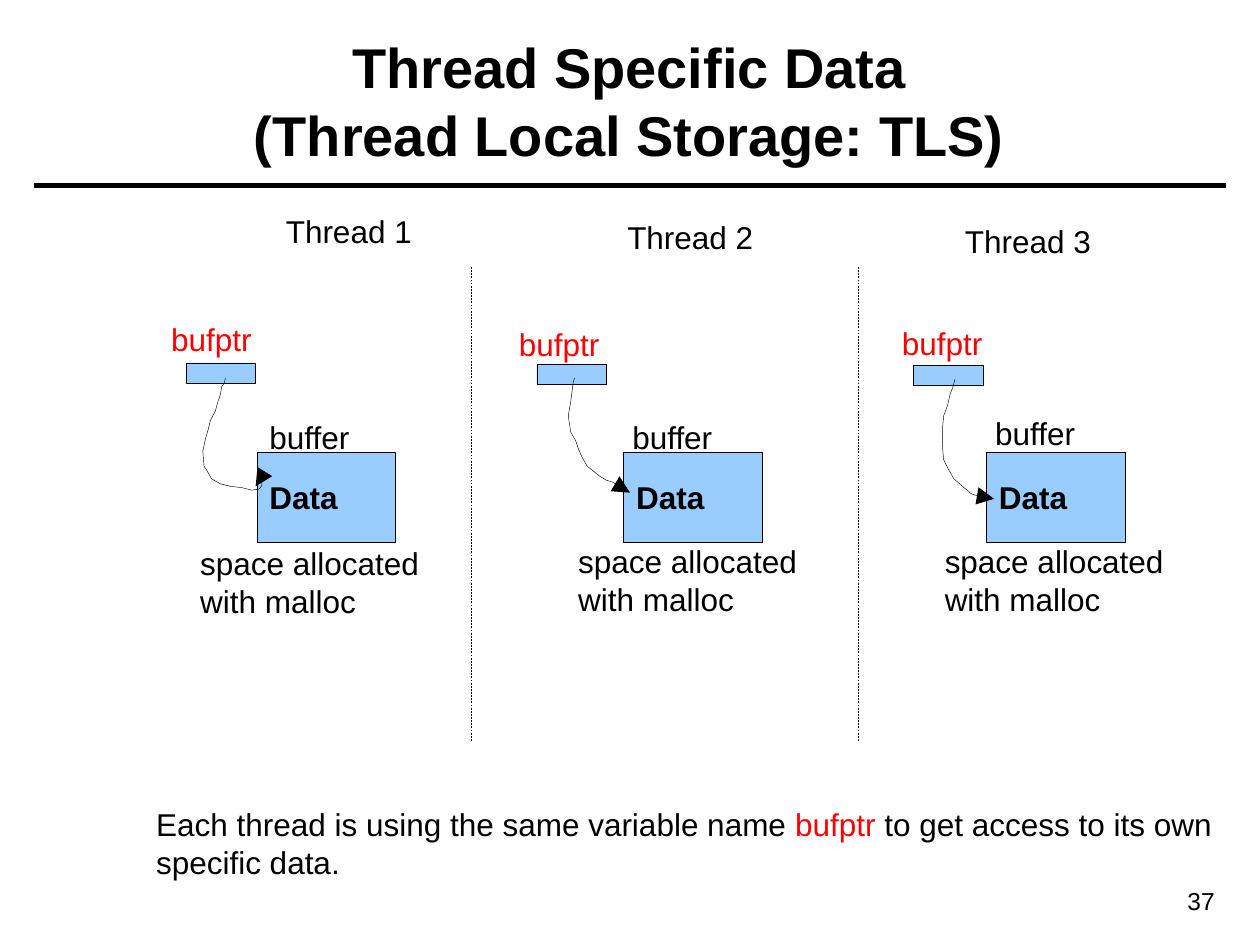
from dataclasses import dataclass

from lxml import etree
from pptx import Presentation
from pptx.dml.color import RGBColor
from pptx.enum.dml import MSO_LINE
from pptx.enum.shapes import MSO_CONNECTOR, MSO_SHAPE
from pptx.enum.text import MSO_ANCHOR, MSO_AUTO_SIZE, PP_ALIGN
from pptx.oxml.ns import qn
from pptx.util import Inches, Pt

BLACK = RGBColor(0x00, 0x00, 0x00)
RED = RGBColor(0xFF, 0x00, 0x00)
LIGHT_BLUE = RGBColor(0x99, 0xCC, 0xFF)
RECTANGLE = MSO_SHAPE.RECTANGLE
STRAIGHT = MSO_CONNECTOR.STRAIGHT
DASH = MSO_LINE.DASH
MIDDLE = MSO_ANCHOR.MIDDLE
LEFT, CENTER, RIGHT = PP_ALIGN.LEFT, PP_ALIGN.CENTER, PP_ALIGN.RIGHT
FIT, FIXED = MSO_AUTO_SIZE.SHAPE_TO_FIT_TEXT, MSO_AUTO_SIZE.NONE

HAIRLINE = 0.25
Point = tuple[float, float]


@dataclass
class Thread:
    name: str
    name_at: Point
    pointer_label_at: Point
    pointer_at: Point
    buffer_label_at: Point
    data_left: float
    caption_at: Point
    arrow: list[tuple[int, int]]  # hundredths of an inch


THREADS = [
    Thread("Thread 1", (2.17, 1.63), (1.26, 2.49), (1.48, 2.88),
           (2.04, 3.27), 2.04, (1.49, 4.27),
           [(179, 300), (178, 304), (176, 307), (175, 313), (173, 319),
            (171, 326), (167, 334), (165, 342), (163, 349), (161, 358),
            (162, 370), (164, 373), (168, 380), (175, 384), (183, 386),
            (192, 387), (200, 389), (206, 388), (208, 385), (207, 376),
            (205, 381), (203, 386)]),
    Thread("Thread 2", (4.88, 1.68), (4.02, 2.53), (4.26, 2.89),
           (4.92, 3.27), 4.95, (4.49, 4.25),
           [(456, 300), (455, 303), (453, 319), (451, 330), (453, 343),
            (457, 350), (459, 356), (462, 363), (466, 370), (476, 378),
            (481, 381), (487, 383), (492, 387), (494, 389), (499, 391),
            (500, 391)]),
    Thread("Thread 3", (7.56, 1.71), (7.06, 2.52), (7.25, 2.90),
           (7.80, 3.24), 7.83, (7.40, 4.25),
           [(758, 301), (756, 308), (754, 313), (752, 322), (749, 330),
            (748, 340), (748, 355), (749, 365), (753, 373), (757, 380),
            (765, 387), (771, 392), (777, 394), (784, 397), (788, 397),
            (789, 396)]),
]


def add_text(p, text: str, **formats) -> None:
    """Add runs in one format, with a line break at each newline."""
    values = {"name": "Arial", "size": Pt(18), "bold": False} | formats
    color = values.pop("color", BLACK)
    for i, line in enumerate(text.split("\n")):
        if i:
            p.add_line_break()
        r = p.add_run()
        r.text = line
        for key, value in values.items():
            setattr(r.font, key, value)
        r.font.color.rgb = color


def add_label(s, at: Point, extent: Point, *lines: str, **formats):
    """Add a text box with one paragraph per line."""
    box = s.shapes.add_textbox(*map(Inches, at + extent))
    tf = box.text_frame
    tf.word_wrap = False
    tf.auto_size = FIT
    for i, line in enumerate(lines):
        p = tf.add_paragraph() if i else tf.paragraphs[0]
        add_text(p, line, **formats)
    return box


def add_box(s, at: Point, extent: Point, text: str = "") -> None:
    sp = s.shapes.add_shape(RECTANGLE, *map(Inches, at + extent))
    sp.shadow.inherit = False
    sp.fill.solid()
    sp.fill.fore_color.rgb = LIGHT_BLUE
    sp.line.color.rgb = BLACK
    sp.line.width = Pt(HAIRLINE)
    if text:
        tf = sp.text_frame
        tf.word_wrap = False
        tf.vertical_anchor = MIDDLE
        tf.paragraphs[0].alignment = LEFT
        add_text(tf.paragraphs[0], text, bold=True)


def add_line(s, start: Point, end: Point, width: float, dash=None) -> None:
    line = s.shapes.add_connector(STRAIGHT, *map(Inches, start + end))
    line.line.color.rgb = BLACK
    line.line.width = Pt(width)
    line.line.dash_style = dash
    etree.SubElement(line._element.spPr, qn("a:effectLst"))


def add_curved_arrow(s, points: list[tuple[int, int]]) -> None:
    builder = s.shapes.build_freeform(*points[0], scale=Inches(0.01))
    builder.add_line_segments(points[1:], close=False)
    sp = builder.convert_to_shape()
    sp.shadow.inherit = False
    sp.fill.background()
    sp.line.color.rgb = BLACK
    sp.line.width = Pt(HAIRLINE)
    etree.SubElement(sp.line._get_or_add_ln(), qn("a:tailEnd"),
                     type="triangle", w="lg", len="lg")


def add_thread(s, thread: Thread) -> None:
    add_label(s, thread.name_at, (1.21, 0.4), thread.name)
    add_box(s, (thread.data_left, 3.59), (1.1, 0.71), "Data")
    add_label(s, thread.buffer_label_at, (0.84, 0.4), "buffer")
    add_label(s, thread.pointer_label_at, (0.85, 0.4), "bufptr", color=RED)
    add_box(s, thread.pointer_at, (0.55, 0.16))
    add_curved_arrow(s, thread.arrow)
    add_label(s, thread.caption_at, (2.03, 0.71),
              "space allocated", "with malloc")


def main() -> None:
    prs = Presentation()
    prs.slide_width, prs.slide_height = Inches(10), Inches(7.5)
    s = prs.slides.add_slide(prs.slide_layouts[5])

    # Title and rule
    title = s.shapes.title
    title.left, title.top = Inches(0.35), Inches(0.17)
    title.width, title.height = Inches(9.29), Inches(1.25)
    tf = title.text_frame
    tf.auto_size = FIXED
    tf.vertical_anchor = MIDDLE
    p = tf.paragraphs[0]
    p.alignment = CENTER
    add_text(p, "Thread Specific Data\n(Thread Local Storage: TLS)",
             size=Pt(32), bold=True)
    add_line(s, (0.27, 1.47), (9.73, 1.47), 3)

    # Threads and their dividers
    for thread in THREADS:
        add_thread(s, thread)
    for x in (3.74, 6.81):
        add_line(s, (x, 2.12), (x, 5.88), HAIRLINE, DASH)

    # Summary
    summary = add_label(s, (1.14, 6.34), (8.85, 0.71),
                        "Each thread is using the same variable name ")
    p = summary.text_frame.paragraphs[0]
    add_text(p, "bufptr", color=RED)
    add_text(p, " to get access to its own \nspecific data.")

    # Page number
    number = add_label(s, (8.7, 6.98), (1.04, 0.34), "37", size=Pt(14))
    number.text_frame.word_wrap = True
    number.text_frame.auto_size = FIXED
    number.text_frame.paragraphs[0].alignment = RIGHT

    prs.save("out.pptx")


if __name__ == "__main__":
    main()
